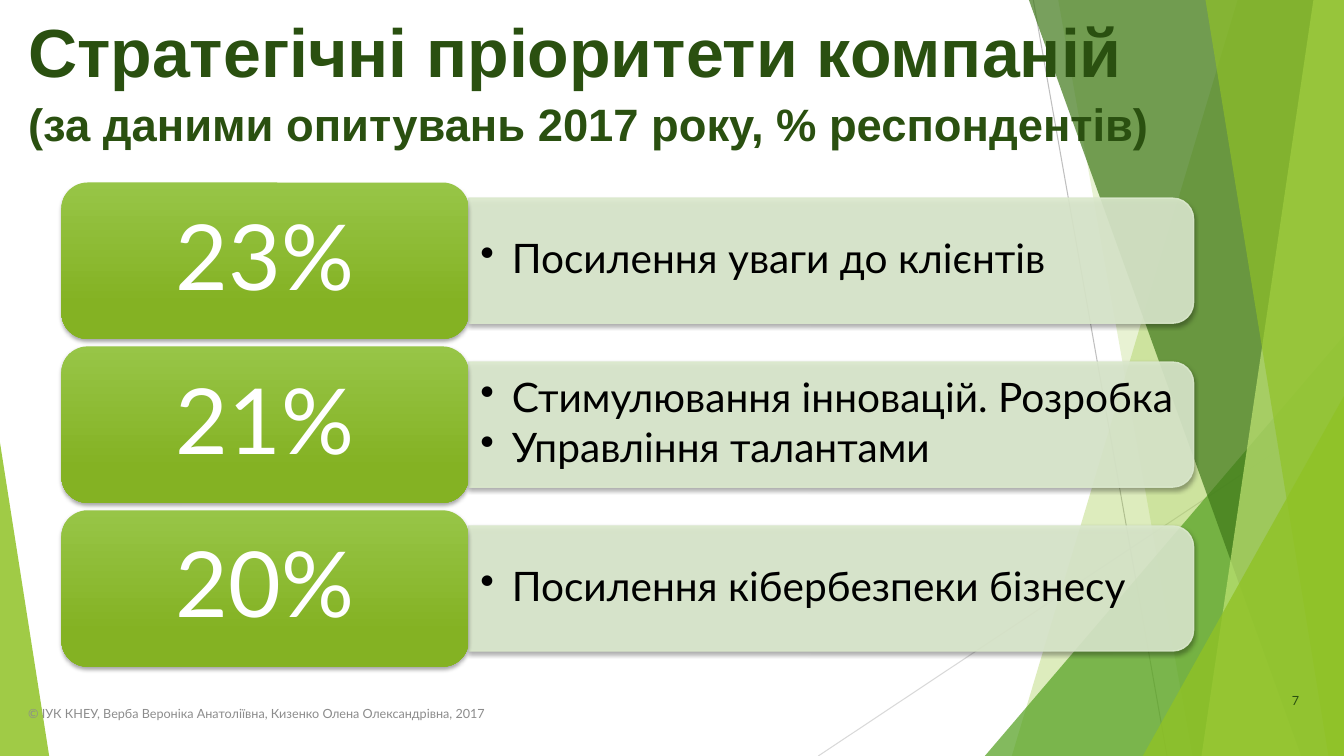
from lxml import etree
from pptx import Presentation
from pptx.dml.color import RGBColor
from pptx.enum.shapes import MSO_CONNECTOR, MSO_SHAPE
from pptx.enum.text import MSO_ANCHOR, PP_ALIGN
from pptx.oxml import parse_xml
from pptx.oxml.ns import nsdecls, qn
from pptx.util import Cm, Pt

STRAIGHT = MSO_CONNECTOR.STRAIGHT
TRIANGLE = MSO_SHAPE.ISOSCELES_TRIANGLE
TILE = MSO_SHAPE.ROUNDED_RECTANGLE
BAR = MSO_SHAPE.ROUND_2_SAME_RECTANGLE
TOP, MIDDLE = MSO_ANCHOR.TOP, MSO_ANCHOR.MIDDLE
LEFT, CENTER, RIGHT = PP_ALIGN.LEFT, PP_ALIGN.CENTER, PP_ALIGN.RIGHT

WHITE = RGBColor(0xFF, 0xFF, 0xFF)
BLACK = RGBColor(0, 0, 0)
GREY = RGBColor(0x8C, 0x8C, 0x8C)
LINE_GREY = RGBColor(0xBF, 0xBF, 0xBF)
PALE_GREY = RGBColor(0xD9, 0xD9, 0xD9)
LIME = RGBColor(0x90, 0xC2, 0x26)
GREEN = RGBColor(0x54, 0xA0, 0x21)
FOREST = RGBColor(0x3F, 0x78, 0x19)
PALE_LIME = RGBColor(0xC0, 0xE4, 0x74)
DARK_GREEN = RGBColor(0x2A, 0x50, 0x10)
BAR_GREEN = RGBColor(0xDB, 0xE9, 0xCD)
TILE_TOP = RGBColor(0x97, 0xC5, 0x47)
TILE_BOTTOM = RGBColor(0x84, 0xB2, 0x23)

SLIDE_W, SLIDE_H = 33.87, 19.05

PRIORITIES = [
    ("23%", ["Посилення уваги до клієнтів"]),
    ("21%", ["Стимулювання інновацій. Розробка", "Управління талантами"]),
    ("20%", ["Посилення кібербезпеки бізнесу"]),
]


def set_alpha(fill_parent, percent):
    color = fill_parent.find(qn("a:solidFill"))[0]
    etree.SubElement(color, qn("a:alpha")).set("val", str(percent * 1000))


def paint(sp, color, percent):
    sp.shadow.inherit = False
    sp.fill.solid()
    sp.fill.fore_color.rgb = color
    set_alpha(sp._element.spPr, percent)
    sp.line.fill.background()


def add_shadow(sp):
    sp.shadow.inherit = False
    sp._element.spPr.find(qn("a:effectLst")).append(parse_xml(
        f'<a:outerShdw {nsdecls("a")} blurRad="38100" dist="25400" dir="5400000" rotWithShape="0">'
        '<a:srgbClr val="000000"><a:alpha val="35000"/></a:srgbClr></a:outerShdw>'))


def set_frame(tf, anchor, insets):
    tf.word_wrap = True
    tf.vertical_anchor = anchor
    tf.margin_left, tf.margin_top, tf.margin_right, tf.margin_bottom = map(Cm, insets)


def add_run(p, text, size, color, font="Lato", bold=False):
    r = p.add_run()
    r.text = text
    r.font.size, r.font.name, r.font.bold = Pt(size), font, bold
    r.font.color.rgb = color


def add_label(s, box, text, color, align):
    tf = s.shapes.add_textbox(*map(Cm, box)).text_frame
    set_frame(tf, MIDDLE, (0.25, 0.13, 0.25, 0.13))
    p = tf.paragraphs[0]
    p.alignment = align
    add_run(p, text, 9, color)


def add_backdrop(s, w, h):
    # Thin lines
    for x1, y1, x2, color in [(26.04, 0, 29.41, LINE_GREY), (w, 10.24, 20.62, PALE_GREY)]:
        line = s.shapes.add_connector(STRAIGHT, Cm(x1), Cm(y1), Cm(x2), Cm(h))
        line.line.color.rgb = color
        line.line.width = Pt(0.75)
        etree.SubElement(line._element.spPr, qn("a:effectLst"))

    # Facets reach the right edge from a slanted side
    def facet(top_x, bottom_x, color, percent):
        fb = s.shapes.build_freeform(Cm(top_x), 0)
        fb.add_line_segments([(Cm(w), 0), (Cm(w), Cm(h)), (Cm(bottom_x), Cm(h))])
        paint(fb.convert_to_shape(), color, percent)

    # Triangles stand on the bottom edge, apex at one end
    def triangle(x, y, width, apex, color, percent):
        sp = s.shapes.add_shape(TRIANGLE, Cm(x), Cm(y), Cm(width), Cm(h - y))
        sp.adjustments[0] = apex
        paint(sp, color, percent)

    facet(31.19, 25.5, LIME, 30)
    facet(26.67, 30.05, LIME, 20)
    triangle(24.82, 8.46, w - 24.82, 1, GREEN, 72)
    facet(25.93, 32.79, FOREST, 70)
    facet(33.1, 30.28, PALE_LIME, 70)
    facet(30.38, 33.48, LIME, 65)
    triangle(28.8, 9.98, w - 28.8, 1, LIME, 80)
    triangle(0, 11.15, 1.24, 0, LIME, 85)


def add_title(s, x, y, w, h):
    tf = s.shapes.add_textbox(Cm(x), Cm(y), Cm(w), Cm(h)).text_frame
    set_frame(tf, TOP, (0.25, 0.25, 0.25, 0.13))
    add_run(tf.paragraphs[0], "Стратегічні пріоритети компаній", 48.6, DARK_GREEN, "Arial", True)
    p = tf.add_paragraph()
    p.space_before = Pt(3)
    add_run(p, "(за даними опитувань 2017 року, % респондентів)", 32.4, DARK_GREEN, "Arial", True)


def add_priority(s, x, y, w, h, share, items):
    tile_w, bar_h = 10.26, 0.8 * h
    bar_x, bar_y, bar_w = x + tile_w, y + 0.1 * h, w - tile_w

    # Bar, turned so that its rounded end points right
    sp = s.shapes.add_shape(BAR, Cm(bar_x + (bar_w - bar_h) / 2), Cm(bar_y + (bar_h - bar_w) / 2),
                            Cm(bar_h), Cm(bar_w))
    sp.rotation = 90
    paint(sp, BAR_GREEN, 90)
    sp.line.color.rgb = BAR_GREEN
    sp.line.width = Pt(1)
    set_alpha(sp.line._ln, 90)
    add_shadow(sp)

    # Bulleted items
    tf = s.shapes.add_textbox(Cm(bar_x), Cm(bar_y), Cm(bar_w), Cm(bar_h)).text_frame
    set_frame(tf, MIDDLE, (0.3, 0.15, 0, 0.15))
    for i, item in enumerate(items):
        p = tf.add_paragraph() if i else tf.paragraphs[0]
        p.line_spacing = 0.9
        p.space_before = Pt(4.35 if i else 0)
        pPr = p._p.get_or_add_pPr()
        pPr.set("marL", str(Cm(0.79)))
        pPr.set("indent", str(-Cm(0.79)))
        etree.SubElement(pPr, qn("a:buChar")).set("char", "•")
        add_run(p, item, 29, BLACK)

    # Tile with the share
    sp = s.shapes.add_shape(TILE, Cm(x), Cm(y), Cm(tile_w), Cm(h))
    sp.fill.gradient()
    sp.fill.gradient_angle = 270
    for stop, position, color in zip(sp.fill.gradient_stops, (0, 0.78), (TILE_TOP, TILE_BOTTOM)):
        stop.position = position
        stop.color.rgb = color
    sp.line.fill.background()
    add_shadow(sp)
    set_frame(sp.text_frame, MIDDLE, (0.87, 0.55, 0.87, 0.55))
    p = sp.text_frame.paragraphs[0]
    p.alignment = CENTER
    p.line_spacing = 0.9
    add_run(p, share, 65, WHITE)


def add_priorities(s, x, y, w, h):
    row_h, pitch = 3.94, (h - 3.94) / (len(PRIORITIES) - 1)
    for i, (share, items) in enumerate(PRIORITIES):
        add_priority(s, x, y + i * pitch, w, row_h, share, items)


def add_footer(s, x, y, w, h):
    add_label(s, (x, y + 0.33, 17.5, h), "© ІУК КНЕУ, Верба Вероніка Анатоліївна, Кизенко Олена Олександрівна, 2017",
              GREY, LEFT)
    add_label(s, (x + w - 1.9, y, 1.9, h), "7", DARK_GREEN, RIGHT)


def main():
    prs = Presentation()
    prs.slide_width, prs.slide_height = Cm(SLIDE_W), Cm(SLIDE_H)
    s = prs.slides.add_slide(prs.slide_layouts[6])
    add_backdrop(s, SLIDE_W, SLIDE_H)
    add_title(s, 0.46, 0, 30.4, 4.14)
    add_footer(s, 0.46, 17.15, 32.53, 1.01)
    add_priorities(s, 1.55, 4.6, 28.53, 12.2)
    prs.save("out.pptx")


if __name__ == "__main__":
    main()
